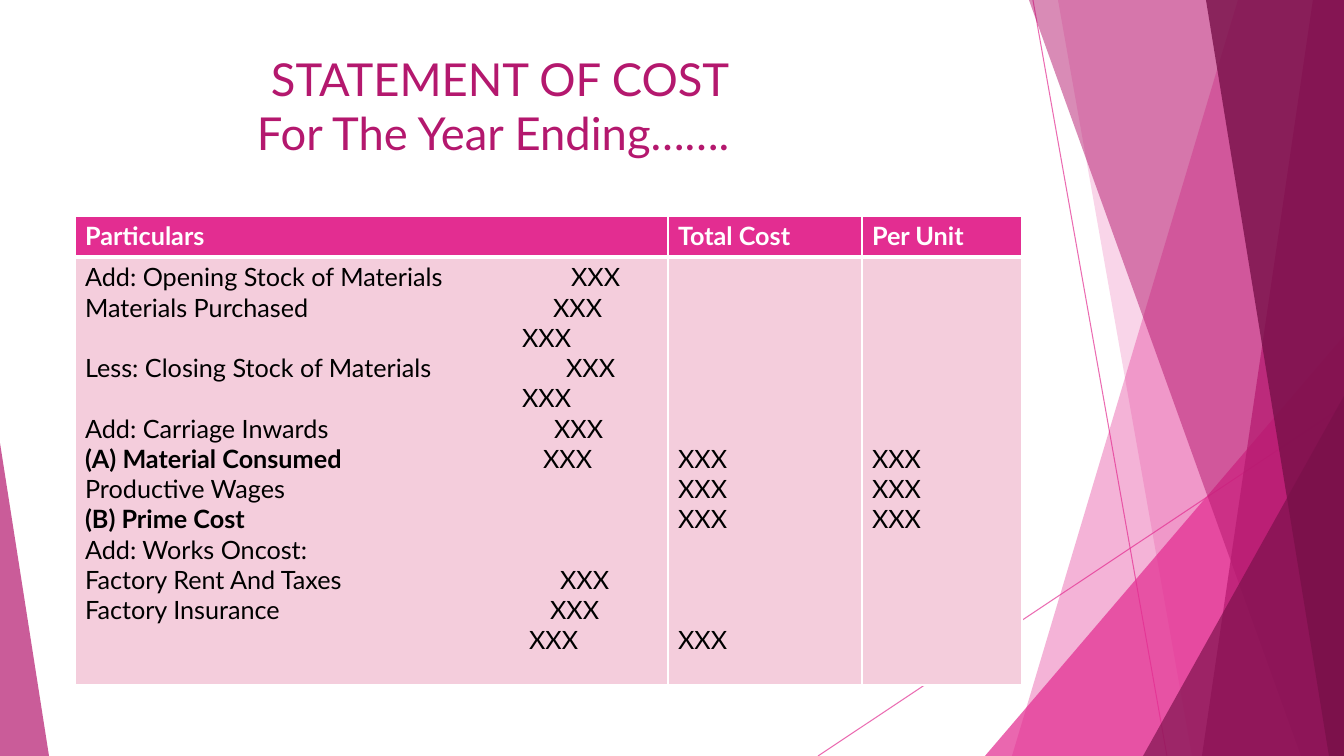
from dataclasses import dataclass

from lxml import etree
from pptx import Presentation
from pptx.dml.color import RGBColor
from pptx.enum.shapes import MSO_CONNECTOR, MSO_SHAPE
from pptx.oxml.ns import qn
from pptx.util import Emu, Pt

STRAIGHT = MSO_CONNECTOR.STRAIGHT
TRIANGLE = MSO_SHAPE.ISOSCELES_TRIANGLE
PAGE_WIDTH, PAGE_HEIGHT = 1344, 756


@dataclass(frozen=True)
class Theme:
    font: str = "Lato"
    pink: str = "E32D91"
    magenta: str = "B4186E"
    plum: str = "781049"
    blush: str = "F4CDDC"
    white: str = "FFFFFF"
    black: str = "000000"
    title_size: float = 32.4
    table_size: int = 18


THEME = Theme()


@dataclass(frozen=True)
class Ray:
    start: tuple[int, int]
    end: tuple[int, int]


@dataclass(frozen=True)
class Facet:
    """A band from its slanted left side to the right edge of the page."""
    top_x: int
    bottom_x: int
    color: str
    opacity: int


@dataclass(frozen=True)
class Corner:
    """A right triangle standing on the bottom edge; apex is 0 (left) or 1 (right)."""
    left: int
    top: int
    width: int
    apex: int
    color: str
    opacity: int


@dataclass(frozen=True)
class Entry:
    label: str
    amount_at: int = 0
    bold: bool = False


@dataclass(frozen=True)
class TitleLine:
    text: str
    indent: int


RAYS = [Ray((1033, 0), (1167, 756)), Ray((1344, 406), (818, 756))]
BACKDROP = [
    Facet(1238, 1012, THEME.pink, 36),
    Facet(1058, 1192, THEME.pink, 20),
    Corner(985, 336, 359, 1, THEME.pink, 72),
    Facet(1029, 1301, THEME.magenta, 50),
    Facet(1313, 1202, THEME.magenta, 70),
    Facet(1206, 1329, THEME.plum, 80),
    Corner(1143, 396, 201, 1, THEME.plum, 66),
    Corner(0, 443, 49, 0, THEME.magenta, 70),
]
TITLE = [TitleLine("STATEMENT OF COST", 186), TitleLine("For The Year Ending…….", 172)]
HEADINGS = ["Particulars", "Total Cost", "Per Unit"]
COLUMN_WIDTHS = [593, 194, 160]
ROW_HEIGHTS = [41, 428]
AMOUNT = "XXX"
ENTRIES = [
    Entry("Add: Opening Stock of Materials", 486),
    Entry("Materials Purchased", 468),
    Entry("", 437),
    Entry("Less: Closing Stock of Materials", 481),
    Entry("", 437),
    Entry("Add: Carriage Inwards", 469),
    Entry("(A) Material Consumed", 458, bold=True),
    Entry("Productive Wages"),
    Entry("(B) Prime Cost", bold=True),
    Entry("Add: Works Oncost:"),
    Entry("Factory Rent And Taxes", 475),
    Entry("Factory Insurance", 465),
    Entry("", 444),
]
TOTAL_COST_LINES = [6, 7, 8, 12]
PER_UNIT_LINES = [6, 7, 8]
LINE_POINTS = 21.6
CELL_INSET_POINTS = 3.6


def px(length: int) -> Emu:
    return Emu(round(length * 914400 / 100.8))


def rgb(color: str) -> RGBColor:
    return RGBColor.from_string(color)


def set_opacity(shape, percent: int) -> None:
    color = shape.element.spPr.find(f".//{qn('a:srgbClr')}")
    etree.SubElement(color, qn("a:alpha"), val=str(percent * 1000))


def style_font(font, size: float, color: str, bold: bool = False) -> None:
    font.name, font.size, font.bold = THEME.font, Pt(size), bold
    font.color.rgb = rgb(color)


def draw_ray(page, ray: Ray) -> None:
    line = page.shapes.add_connector(STRAIGHT, *map(px, ray.start + ray.end))
    line.line.color.rgb = rgb(THEME.pink)
    line.line.width = Pt(0.75)
    set_opacity(line, 70)
    etree.SubElement(line.element.spPr, qn("a:effectLst"))


def draw_backdrop(page, part: Facet | Corner) -> None:
    if isinstance(part, Facet):
        builder = page.shapes.build_freeform(px(part.top_x), 0)
        corners = [(PAGE_WIDTH, 0), (PAGE_WIDTH, PAGE_HEIGHT), (part.bottom_x, PAGE_HEIGHT)]
        builder.add_line_segments([(px(x), px(y)) for x, y in corners], close=True)
        shape = builder.convert_to_shape()
    else:
        shape = page.shapes.add_shape(TRIANGLE, px(part.left), px(part.top),
                                      px(part.width), px(PAGE_HEIGHT - part.top))
        shape.adjustments[0] = part.apex
    shape.shadow.inherit = False
    shape.fill.solid()
    shape.fill.fore_color.rgb = rgb(part.color)
    shape.line.fill.background()
    set_opacity(shape, part.opacity)


def draw_title(page) -> None:
    box = page.shapes.add_textbox(px(75), px(46), px(947), px(145))
    frame = box.text_frame
    frame.word_wrap = True
    for index, line in enumerate(TITLE):
        para = frame.add_paragraph() if index else frame.paragraphs[0]
        para.text = line.text
        para._p.get_or_add_pPr().set("marL", str(px(line.indent)))
        style_font(para.font, THEME.title_size, THEME.magenta)


def style_cell(cell, fill: str, top: int, bottom: int) -> None:
    """Fill the cell and rule it in white; top and bottom are in points."""
    cell.fill.solid()
    cell.fill.fore_color.rgb = rgb(fill)
    properties = cell._tc.get_or_add_tcPr()
    borders = {"lnL": 1, "lnR": 1, "lnT": top, "lnB": bottom}
    for index, (side, width) in enumerate(borders.items()):
        border = etree.Element(qn(f"a:{side}"), w=str(Pt(width)))
        paint = etree.SubElement(border, qn("a:solidFill"))
        etree.SubElement(paint, qn("a:srgbClr"), val=THEME.white)
        properties.insert(index, border)


def write_particulars(cell) -> None:
    frame = cell.text_frame
    for index, entry in enumerate(ENTRIES):
        para = frame.add_paragraph() if index else frame.paragraphs[0]
        style_font(para.font, THEME.table_size, THEME.black)
        texts = [(entry.label, entry.bold)]
        if entry.amount_at:
            texts.append((f"\t{AMOUNT}", False))
            stops = etree.Element(qn("a:tabLst"))
            etree.SubElement(stops, qn("a:tab"), pos=str(px(entry.amount_at)), algn="l")
            para._p.get_or_add_pPr().insert(0, stops)
        for text, bold in texts:
            if text:
                span = para.add_run()
                span.text = text
                style_font(span.font, THEME.table_size, THEME.black, bold)


def write_amounts(cell, lines: list[int]) -> None:
    """Put an amount on each of the given text lines of the cell."""
    cell.margin_top = Pt(CELL_INSET_POINTS + lines[0] * LINE_POINTS)
    frame = cell.text_frame
    for index, line in enumerate(lines):
        para = frame.add_paragraph() if index else frame.paragraphs[0]
        para.text = AMOUNT
        style_font(para.font, THEME.table_size, THEME.black)
        if index:
            para.space_before = Pt((line - lines[index - 1] - 1) * LINE_POINTS)


def draw_cost_table(page) -> None:
    table = page.shapes.add_table(2, 3, px(75), px(216), px(sum(COLUMN_WIDTHS)),
                                  px(sum(ROW_HEIGHTS))).table
    for row, height in zip(table.rows, ROW_HEIGHTS):
        row.height = px(height)
    for index, (heading, width) in enumerate(zip(HEADINGS, COLUMN_WIDTHS)):
        table.columns[index].width = px(width)
        header = table.cell(0, index)
        header.text = heading
        style_font(header.text_frame.paragraphs[0].font, THEME.table_size, THEME.white, bold=True)
        style_cell(header, THEME.pink, top=1, bottom=3)
        style_cell(table.cell(1, index), THEME.blush, top=3, bottom=1)
    write_particulars(table.cell(1, 0))
    write_amounts(table.cell(1, 1), TOTAL_COST_LINES)
    write_amounts(table.cell(1, 2), PER_UNIT_LINES)


def main() -> None:
    deck = Presentation()
    deck.slide_width, deck.slide_height = px(PAGE_WIDTH), px(PAGE_HEIGHT)
    page = deck.slides.add_slide(deck.slide_layouts[6])
    for ray in RAYS:
        draw_ray(page, ray)
    for part in BACKDROP:
        draw_backdrop(page, part)
    draw_title(page)
    draw_cost_table(page)
    deck.save("out.pptx")


if __name__ == "__main__":
    main()
